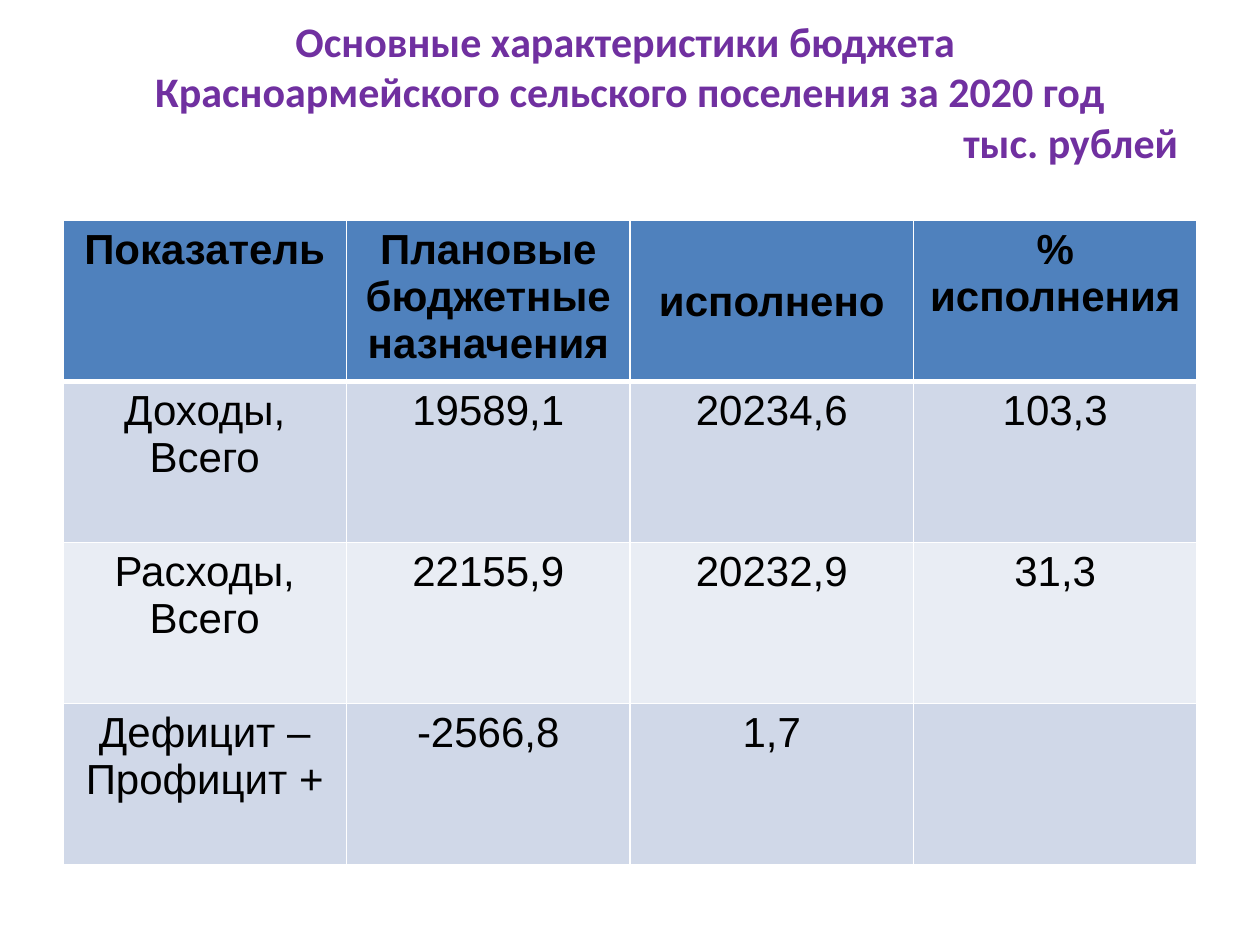
from dataclasses import dataclass

from lxml import etree
from pptx import Presentation
from pptx.dml.color import RGBColor
from pptx.enum import text as t
from pptx.oxml import ns
from pptx.util import Pt


@dataclass(frozen=True)
class Theme:
    title: str = "7030A0"
    ink: str = "000000"
    border: str = "FFFFFF"
    header: str = "4F81BD"
    bands: tuple = ("D0D8E8", "E9EDF4")
    size: float = 24
    title_font: str = "Calibri"
    table_font: str = "Arial"


@dataclass(frozen=True)
class Entry:
    """Lines of one table cell and the gap kept above them, in points."""
    lines: str
    top: float = 3.6


THEME = Theme()
LEFT, WIDTH = 36, 648
TABLE_TOP, ROW_HEIGHT = 126, 92
TITLE_LINES = (
    ("Основные характеристики бюджета ", t.PP_ALIGN.CENTER),
    ("Красноармейского сельского поселения за 2020 год", t.PP_ALIGN.CENTER),
    ("тыс. рублей", t.PP_ALIGN.RIGHT),
)
BUDGET = (
    (Entry("Показатель"), Entry("Плановые бюджетные назначения"),
     Entry("исполнено", top=33.3), Entry("%\nисполнения")),
    (Entry("Доходы,\nВсего"), Entry("19589,1"), Entry("20234,6"), Entry("103,3")),
    (Entry("Расходы,\nВсего"), Entry("22155,9"), Entry("20232,9"), Entry("31,3")),
    (Entry("Дефицит –\nПрофицит +"), Entry("-2566,8"), Entry("1,7"), Entry("")),
)


def apply(target, formats: dict) -> None:
    for name, value in formats.items():
        setattr(target, name, value)


def style_paragraph(paragraph, align, font: str, color: str, bold: bool) -> None:
    paragraph.alignment = align
    for run in paragraph.runs:
        apply(run.font, {"name": font, "size": Pt(THEME.size), "bold": bold})
        run.font.color.rgb = RGBColor.from_string(color)


def add_borders(cell, bottom: float, top: float) -> None:
    """Put the border lines ahead of the fill, as the schema orders them."""
    properties = cell._tc.get_or_add_tcPr()
    widths = {"lnL": 1, "lnR": 1, "lnT": top, "lnB": bottom}
    for place, (side, width) in enumerate(widths.items()):
        line = etree.Element(ns.qn(f"a:{side}"), w=str(Pt(width)))
        fill = etree.SubElement(line, ns.qn("a:solidFill"))
        etree.SubElement(fill, ns.qn("a:srgbClr"), val=THEME.border)
        properties.insert(place, line)


def fill_title(title) -> None:
    apply(title, {"left": Pt(LEFT), "top": Pt(21.6),
                  "width": Pt(WIDTH), "height": Pt(85)})
    frame = title.text_frame
    frame.text = "\n".join(line for line, _ in TITLE_LINES)
    apply(frame, {"auto_size": t.MSO_AUTO_SIZE.NONE, "word_wrap": True,
                  "vertical_anchor": t.MSO_ANCHOR.MIDDLE,
                  "margin_left": Pt(10.8), "margin_right": Pt(10.8),
                  "margin_top": 0, "margin_bottom": Pt(24)})
    for paragraph, (_, align) in zip(frame.paragraphs, TITLE_LINES):
        style_paragraph(paragraph, align, THEME.title_font, THEME.title, True)


def fill_cell(cell, entry: Entry, row: int) -> None:
    is_header = row == 0
    cell.text = entry.lines
    cell.margin_top = Pt(entry.top)
    for paragraph in cell.text_frame.paragraphs:
        style_paragraph(paragraph, t.PP_ALIGN.CENTER, THEME.table_font,
                        THEME.ink, is_header)
    cell.fill.solid()
    color = THEME.header if is_header else THEME.bands[(row - 1) % 2]
    cell.fill.fore_color.rgb = RGBColor.from_string(color)
    add_borders(cell, bottom=3 if is_header else 1, top=3 if row == 1 else 1)


def add_budget_table(slide) -> None:
    rows, columns = len(BUDGET), len(BUDGET[0])
    table = slide.shapes.add_table(rows, columns, Pt(LEFT), Pt(TABLE_TOP),
                                   Pt(WIDTH), Pt(ROW_HEIGHT * rows)).table
    for row, entries in enumerate(BUDGET):
        for column, entry in enumerate(entries):
            fill_cell(table.cell(row, column), entry, row)


def main() -> None:
    deck = Presentation()
    apply(deck, {"slide_width": Pt(720), "slide_height": Pt(540)})
    slide = deck.slides.add_slide(deck.slide_layouts[5])
    fill_title(slide.shapes.title)
    add_budget_table(slide)
    deck.save("out.pptx")


if __name__ == "__main__":
    main()
